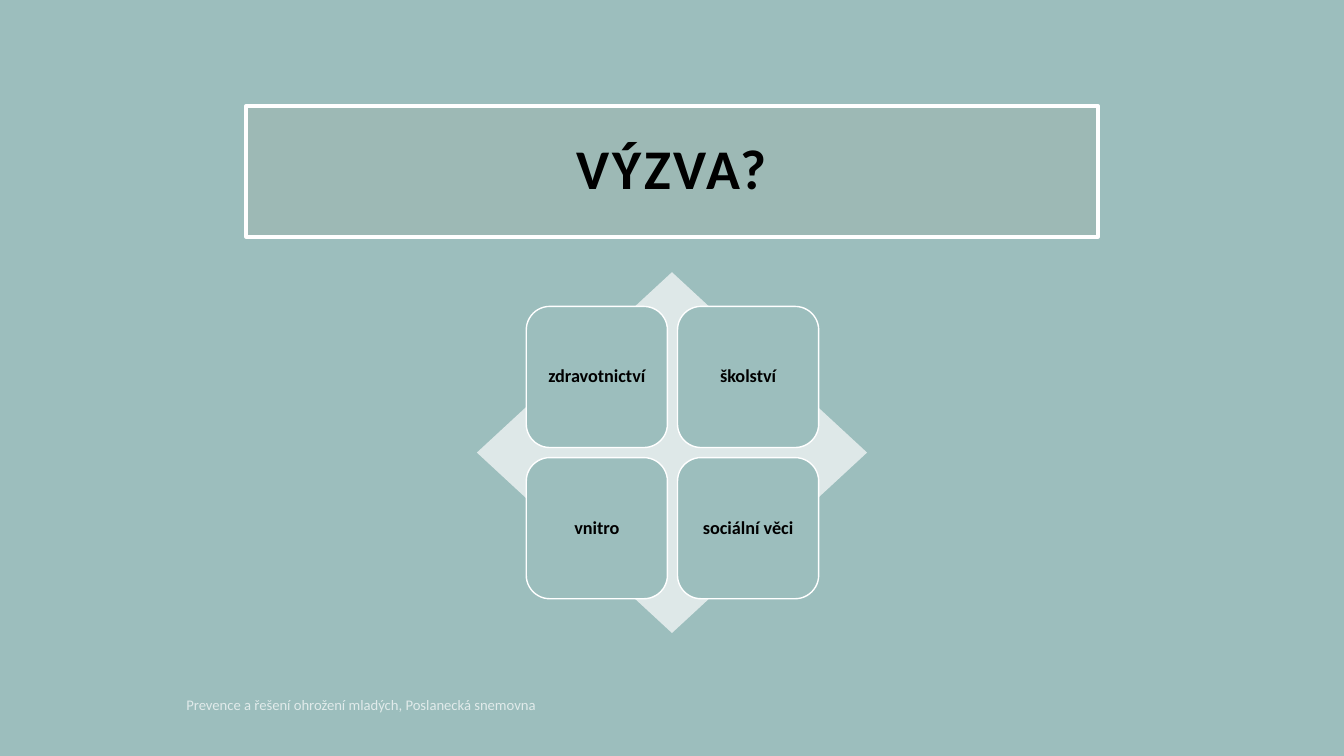
from dataclasses import dataclass

from lxml import etree
from pptx import Presentation
from pptx import util as u
from pptx.dml.color import RGBColor
from pptx.enum import shapes, text
from pptx.oxml.ns import qn

COLOURS = {
    "background": "9CBEBD",
    "title": "A7A08E",
    "diamond": "DEE8E8",
    "white": "FFFFFF",
    "black": "000000",
}
FONT = "Calibri"
TILE_SIZE = 1.4
TILE_PITCH = 1.5
GRID_LEFT, GRID_TOP = 5.22, 3.04


@dataclass
class Tile:
    label: str
    column: int
    row: int


TILES = [
    Tile("zdravotnictví", 0, 0),
    Tile("školství", 1, 0),
    Tile("vnitro", 0, 1),
    Tile("sociální věci", 1, 1),
]


def colour(name: str) -> RGBColor:
    return RGBColor.from_string(COLOURS[name])


def set_opacity(parent, percent: int) -> None:
    solid = parent.find(".//" + qn("a:solidFill"))
    etree.SubElement(solid[0], qn("a:alpha"), val=str(percent * 1000))


def paint(shape, fill: str, line_width: float = 0) -> None:
    shape.fill.solid()
    shape.fill.fore_color.rgb = colour(fill)
    if line_width:
        shape.line.color.rgb = colour("white")
        shape.line.width = u.Pt(line_width)
    else:
        shape.line.fill.background()


def add_shape(page, kind, left: float, top: float, width: float, height: float):
    shape = page.shapes.add_shape(
        kind, u.Inches(left), u.Inches(top), u.Inches(width), u.Inches(height)
    )
    shape.shadow.inherit = False
    return shape


def write(box, words: str, size: float, ink: str, bold: bool, margin: float):
    frame = box.text_frame
    frame.word_wrap = True
    frame.auto_size = text.MSO_AUTO_SIZE.NONE
    frame.vertical_anchor = text.MSO_ANCHOR.MIDDLE
    frame.margin_left = frame.margin_right = u.Inches(margin)
    frame.margin_top = frame.margin_bottom = u.Inches(margin)
    para = frame.paragraphs[0]
    para.text = words
    para.font.name = FONT
    para.font.size = u.Pt(size)
    para.font.bold = bold
    para.font.color.rgb = colour(ink)
    return para


def centre(para) -> None:
    para.alignment = text.PP_ALIGN.CENTER
    para.line_spacing = 0.9


def add_title(page) -> None:
    title = page.shapes.title
    title.left, title.top = u.Inches(2.44), u.Inches(1.05)
    title.width, title.height = u.Inches(8.45), u.Inches(1.3)
    paint(title, "title", 2.5)
    set_opacity(title.element.spPr, 15)
    para = write(title, "VÝZVA?", 40, "black", True, 0.2)
    centre(para)
    for properties in title.element.iter(qn("a:defRPr")):
        properties.set("spc", "200")


def add_tile(page, tile: Tile) -> None:
    box = add_shape(
        page,
        shapes.MSO_SHAPE.ROUNDED_RECTANGLE,
        GRID_LEFT + tile.column * TILE_PITCH,
        GRID_TOP + tile.row * TILE_PITCH,
        TILE_SIZE,
        TILE_SIZE,
    )
    paint(box, "background", 1)
    centre(write(box, tile.label, 13, "black", True, 0.05))


def add_footer(page) -> None:
    box = page.shapes.add_textbox(
        u.Inches(1.75), u.Inches(6.82), u.Inches(6.45), u.Inches(0.35)
    )
    words = "Prevence a řešení ohrožení mladých, Poslanecká snemovna"
    write(box, words, 10.5, "white", False, 0.1)
    set_opacity(box.element.txBody, 70)


def main() -> None:
    deck = Presentation()
    deck.slide_width, deck.slide_height = u.Inches(13.33), u.Inches(7.5)
    page = deck.slides.add_slide(deck.slide_layouts[5])
    page.background.fill.solid()
    page.background.fill.fore_color.rgb = colour("background")
    add_title(page)
    diamond = add_shape(page, shapes.MSO_SHAPE.DIAMOND, 4.73, 2.7, 3.87, 3.58)
    paint(diamond, "diamond")
    for tile in TILES:
        add_tile(page, tile)
    add_footer(page)
    deck.save("out.pptx")


if __name__ == "__main__":
    main()
